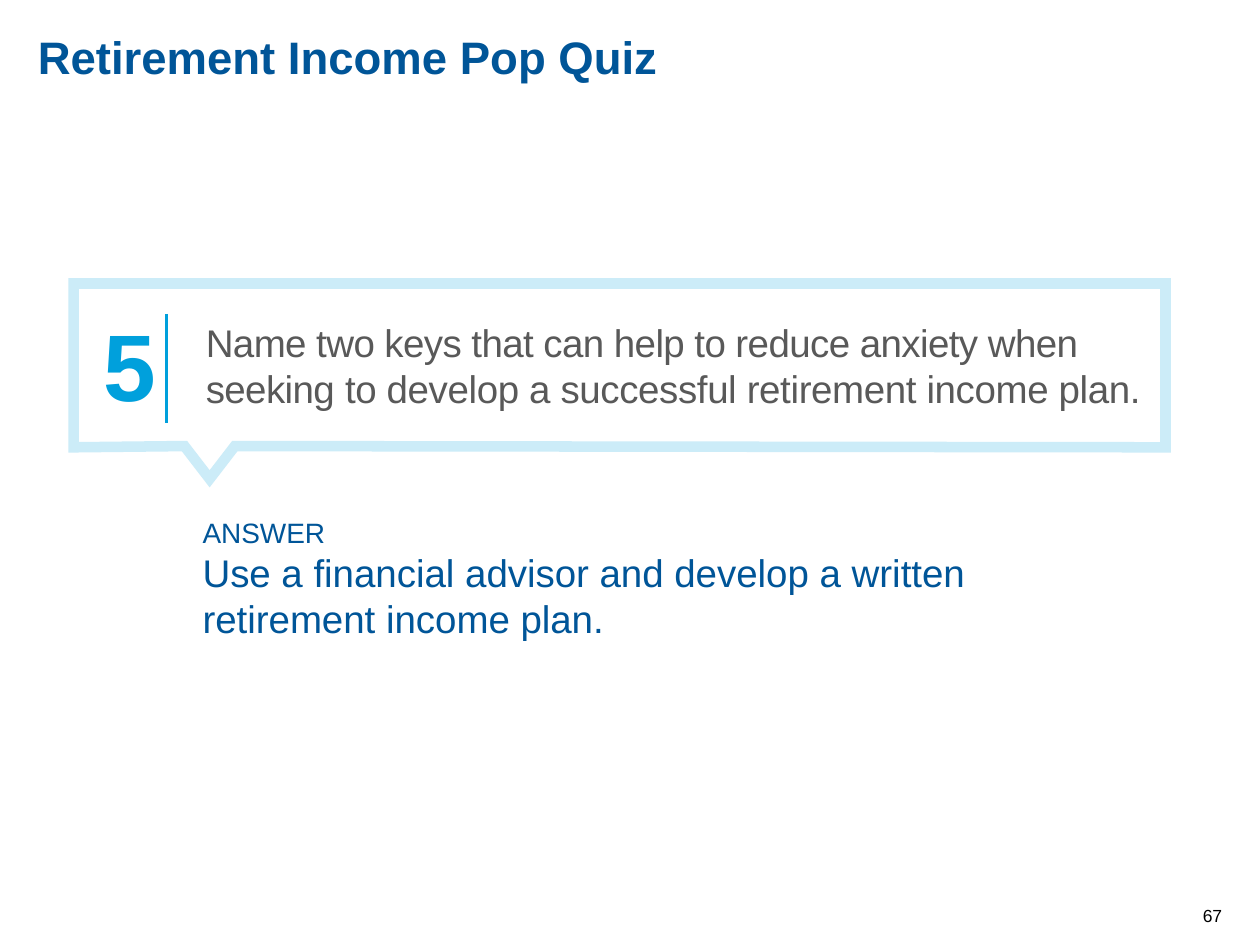
from lxml.etree import SubElement
from pptx import Presentation
from pptx.dml.color import RGBColor
from pptx.enum.shapes import MSO_CONNECTOR as Connector
from pptx.enum.text import MSO_ANCHOR as Anchor, PP_ALIGN as Align
from pptx.oxml.ns import qn
from pptx.util import Pt

COLORS = {
    "navy": "005598",
    "blue": "00A0DC",
    "pale": "CCECF8",
    "gray": "595959",
    "black": "000000",
    "white": "FFFFFF",
}


def rgb(name):
    """Return the named colour of the palette."""
    return RGBColor.from_string(COLORS[name])


def add_frame(slide, box, inset=(0, 0), wrap=True, anchor=Anchor.TOP):
    """Add a text box and return its text frame."""
    frame = slide.shapes.add_textbox(*map(Pt, box)).text_frame
    frame.word_wrap = wrap
    frame.vertical_anchor = anchor
    frame.margin_left = frame.margin_right = Pt(inset[0])
    frame.margin_top = frame.margin_bottom = Pt(inset[1])
    return frame


def write(paragraph, text, size, color, bold=False, align=Align.LEFT, tracking=0, indent=0):
    """Append formatted text to a paragraph."""
    paragraph.alignment = align
    if indent:
        paragraph._p.get_or_add_pPr().set("marL", str(Pt(indent)))
    run = paragraph.add_run()
    run.text = text
    run.font.name = "Arial"
    run.font.size = Pt(size)
    run.font.bold = bold
    run.font.color.rgb = rgb(color)
    if tracking:
        run.font._element.set("spc", str(round(tracking * 100)))


def add_title(slide, box, title):
    """Place the slide title."""
    write(add_frame(slide, box).paragraphs[0], title, size=26, color="navy", bold=True)


def add_bubble(slide, box):
    """Draw the speech bubble with its tail below the box."""
    left, top, width, height = box
    right, bottom = left + width, top + height
    tip, half, drop = left + 77.8, 14.4, 18
    builder = slide.shapes.build_freeform(Pt(left), Pt(top))
    outline = [
        (right, top), (right, bottom), (tip + half, bottom - 0.7),
        (tip, bottom + drop), (tip - half, bottom - 0.7), (left, bottom),
    ]
    builder.add_line_segments([(Pt(x), Pt(y)) for x, y in outline], close=True)
    bubble = builder.convert_to_shape()
    bubble.shadow.inherit = False
    bubble.fill.solid()
    bubble.fill.fore_color.rgb = rgb("white")
    bubble.line.color.rgb = rgb("pale")
    bubble.line.width = Pt(6)
    SubElement(bubble.line._get_or_add_ln(), qn("a:miter"), lim="800000")


def add_question(slide, box, number, parts):
    """Place the bubble, the question number, its divider and the question."""
    left, top, width, height = box
    add_bubble(slide, box)
    number_frame = add_frame(slide, (left + 10, top + 10, 44.6, 72.7), (7.2, 3.6), wrap=False)
    write(number_frame.paragraphs[0], number, size=54, color="blue", bold=True)

    question = add_frame(slide, (left + 75.6, top + 20.2, 556.6, 53.3)).paragraphs[0]
    for text, tracking in parts:
        write(question, text, size=22, color="gray", tracking=tracking)

    x = left + 53.3
    divider = slide.shapes.add_connector(
        Connector.STRAIGHT, Pt(x), Pt(top + 17.3), Pt(x), Pt(top + height - 13.7))
    divider.line.color.rgb = rgb("blue")
    divider.line.width = Pt(1.5)
    SubElement(divider._element.spPr, qn("a:effectLst"))


def add_answer(slide, box, label, answer):
    """Place the answer under its label."""
    frame = add_frame(slide, box, (7.2, 3.6))
    write(frame.paragraphs[0], label, size=16, color="navy", indent=13.7)
    write(frame.add_paragraph(), answer, size=22, color="navy", indent=13.7)


def add_page_number(slide, box, number):
    """Place the page number."""
    frame = add_frame(slide, box, anchor=Anchor.BOTTOM)
    write(frame.paragraphs[0], number, size=10, color="black", align=Align.RIGHT)


def main():
    """Build the quiz slide and save it."""
    deck = Presentation()
    deck.slide_width, deck.slide_height = Pt(720), Pt(540)
    slide = deck.slides.add_slide(deck.slide_layouts[6])
    add_page_number(slide, (669.6, 514.8, 28.8, 14.4), "67")
    add_title(slide, (21.6, 16.6, 504, 57.6), "Retirement Income Pop Quiz")
    add_question(slide, (42, 162, 624, 93.6), "5", [
        ("Name two keys that can help to reduce anxiety when seeking ", -0.3),
        ("to develop a successful retirement income plan.", -0.2),
    ])
    add_answer(slide, (95, 290.9, 537.1, 80), "ANSWER",
               "Use a financial advisor and develop a written retirement income plan.")
    deck.save("out.pptx")


if __name__ == "__main__":
    main()
